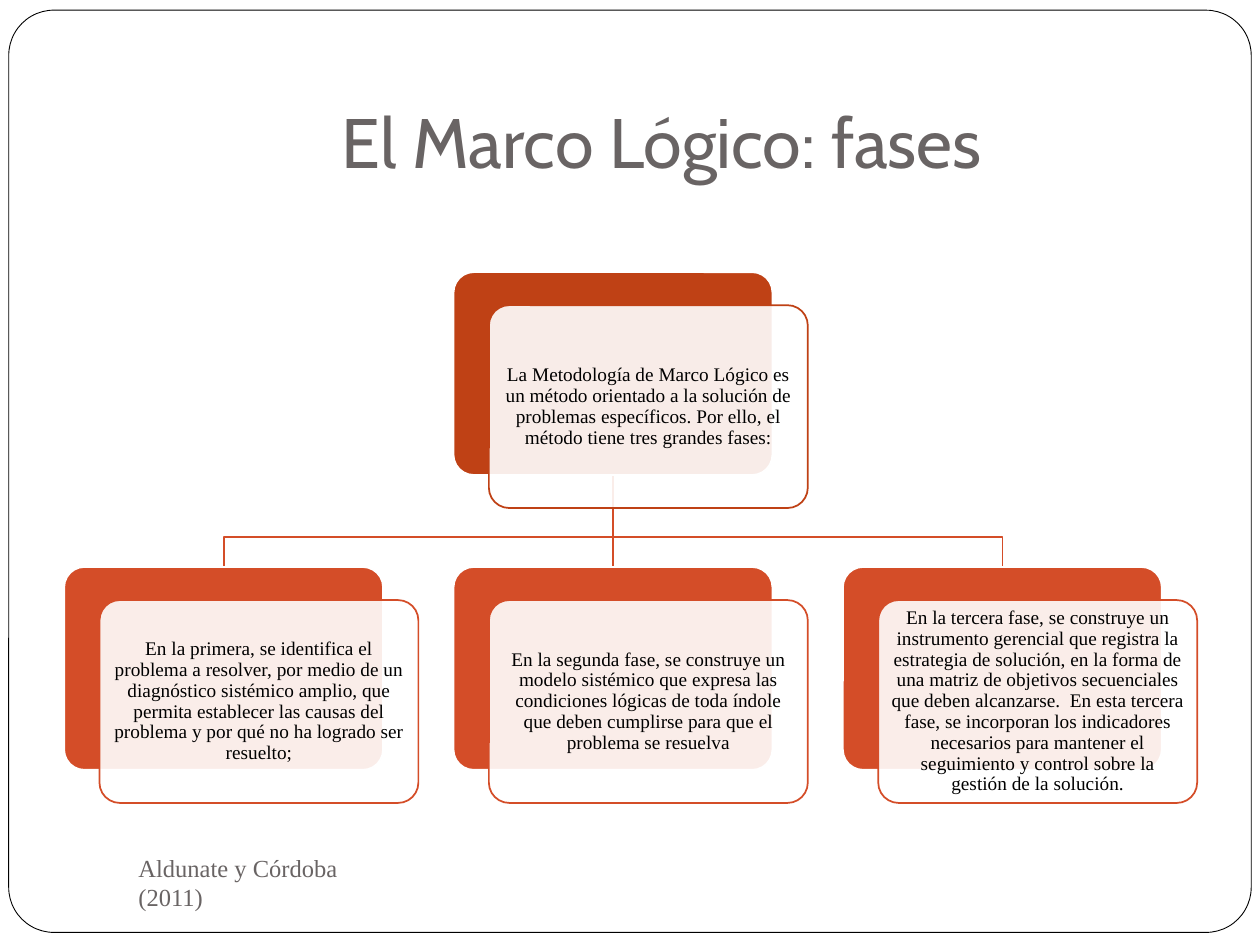
from dataclasses import dataclass

from lxml.etree import SubElement
from pptx import Presentation
from pptx.dml.color import RGBColor
from pptx.enum.shapes import MSO_CONNECTOR, MSO_SHAPE
from pptx.enum.text import MSO_ANCHOR, PP_ALIGN
from pptx.oxml.ns import qn
from pptx.util import Pt

HUES = {
    "white": "FFFFFF",
    "black": "000000",
    "grey": "696464",
    "rust": "BF4115",
    "orange": "D44D28",
}
SERIF = "Times New Roman"

# Card grid, in points
LEFT, STEP = 36.7, 222.5
ROOT_TOP, PHASE_TOP = 155.5, 324
WIDE, HIGH = 182.2, 115.9
SHIFT_X, SHIFT_Y = 20.2, 18.9
BEND = 306.7


@dataclass
class Card:
    col: int
    top: float
    hue: str
    text: str

    @property
    def left(self) -> float:
        return LEFT + self.col * STEP

    @property
    def mid(self) -> float:
        return self.left + WIDE / 2


ROOT = Card(1, ROOT_TOP, "rust",
            "La Metodología de Marco Lógico es un método orientado a la solución de "
            "problemas específicos. Por ello, el método tiene tres grandes fases:")
PHASES = [
    Card(col, PHASE_TOP, "orange", text)
    for col, text in enumerate([
        "En la primera, se identifica el problema a resolver, por medio de un "
        "diagnóstico sistémico amplio, que permita establecer las causas del "
        "problema y por qué no ha logrado ser resuelto;",
        "En la segunda fase, se construye un modelo sistémico que expresa las "
        "condiciones lógicas de toda índole que deben cumplirse para que el "
        "problema se resuelva",
        "En la tercera fase, se construye un instrumento gerencial que registra la "
        "estrategia de solución, en la forma de una matriz de objetivos secuenciales "
        "que deben alcanzarse.  En esta tercera fase, se incorporan los indicadores "
        "necesarios para mantener el seguimiento y control sobre la gestión de la "
        "solución.",
    ])
]


def tint(name: str) -> RGBColor:
    return RGBColor.from_string(HUES[name])


def add_round(slide, left: float, top: float, wide: float, high: float,
              bend: float, fill: str, edge: str, width: float):
    box = slide.shapes.add_shape(MSO_SHAPE.ROUNDED_RECTANGLE,
                                 Pt(left), Pt(top), Pt(wide), Pt(high))
    box.shadow.inherit = False
    box.adjustments[0] = bend
    box.fill.solid()
    box.fill.fore_color.rgb = tint(fill)
    box.line.color.rgb = tint(edge)
    box.line.width = Pt(width)
    return box


def add_run(frame, text: str, size: float, face: str, hue: str, align):
    frame.word_wrap = True
    para = frame.paragraphs[0]
    para.alignment = align
    run = para.add_run()
    run.text = text
    run.font.size = Pt(size)
    run.font.name = face
    run.font.color.rgb = tint(hue)
    return para


def add_label(slide, left: float, top: float, wide: float, high: float, anchor):
    box = slide.shapes.add_textbox(Pt(left), Pt(top), Pt(wide), Pt(high))
    box.text_frame.vertical_anchor = anchor
    return box.text_frame


def add_card(slide, card: Card) -> None:
    add_round(slide, card.left, card.top, WIDE, HIGH, 0.1, card.hue, "white", 1)
    front = add_round(slide, card.left + SHIFT_X, card.top + SHIFT_Y,
                      WIDE, HIGH, 0.1, "white", card.hue, 1)
    # Let the back card show through
    shade = front.fill._xPr.find(qn("a:solidFill"))[0]
    SubElement(shade, qn("a:alpha"), val="90000")
    frame = front.text_frame
    frame.vertical_anchor = MSO_ANCHOR.MIDDLE
    frame.margin_left = frame.margin_right = Pt(3.6)
    frame.margin_top = frame.margin_bottom = Pt(3.6)
    para = add_run(frame, card.text, 11, SERIF, "black", PP_ALIGN.CENTER)
    para.line_spacing = 0.9


def add_link(slide, start: Card, end: Card) -> None:
    foot = start.top + HIGH
    if start.col == end.col:
        link = slide.shapes.add_connector(MSO_CONNECTOR.STRAIGHT, Pt(start.mid),
                                          Pt(foot), Pt(end.mid), Pt(end.top))
        SubElement(link._element.spPr, qn("a:effectLst"))
    else:
        pen = slide.shapes.build_freeform(Pt(start.mid), Pt(foot))
        pen.add_line_segments([(Pt(start.mid), Pt(BEND)), (Pt(end.mid), Pt(BEND)),
                               (Pt(end.mid), Pt(end.top))], close=False)
        link = pen.convert_to_shape()
        link.shadow.inherit = False
        link.fill.background()
    link.line.color.rgb = tint(end.hue)
    link.line.width = Pt(1)


def main() -> None:
    deck = Presentation()
    deck.slide_width, deck.slide_height = Pt(720), Pt(540)
    slide = deck.slides.add_slide(deck.slide_layouts[6])

    # Page frame
    add_round(slide, 5, 5.8, 710, 527, 0.049, "white", "black", 0.5)

    # Title
    title = add_label(slide, 72, 21.6, 612, 90, MSO_ANCHOR.BOTTOM)
    title.margin_bottom = Pt(7.2)
    add_run(title, "El Marco Lógico: fases", 40, "Cabin", "grey", PP_ALIGN.CENTER)

    # Tree: links behind, cards in front
    for phase in reversed(PHASES):
        add_link(slide, ROOT, phase)
    for card in [ROOT, *PHASES]:
        add_card(slide, card)

    # Source line
    source = add_label(slide, 72, 486, 157.7, 36, MSO_ANCHOR.MIDDLE)
    add_run(source, "Aldunate y Córdoba (2011)", 14, SERIF, "grey", PP_ALIGN.LEFT)

    deck.save("out.pptx")


if __name__ == "__main__":
    main()
